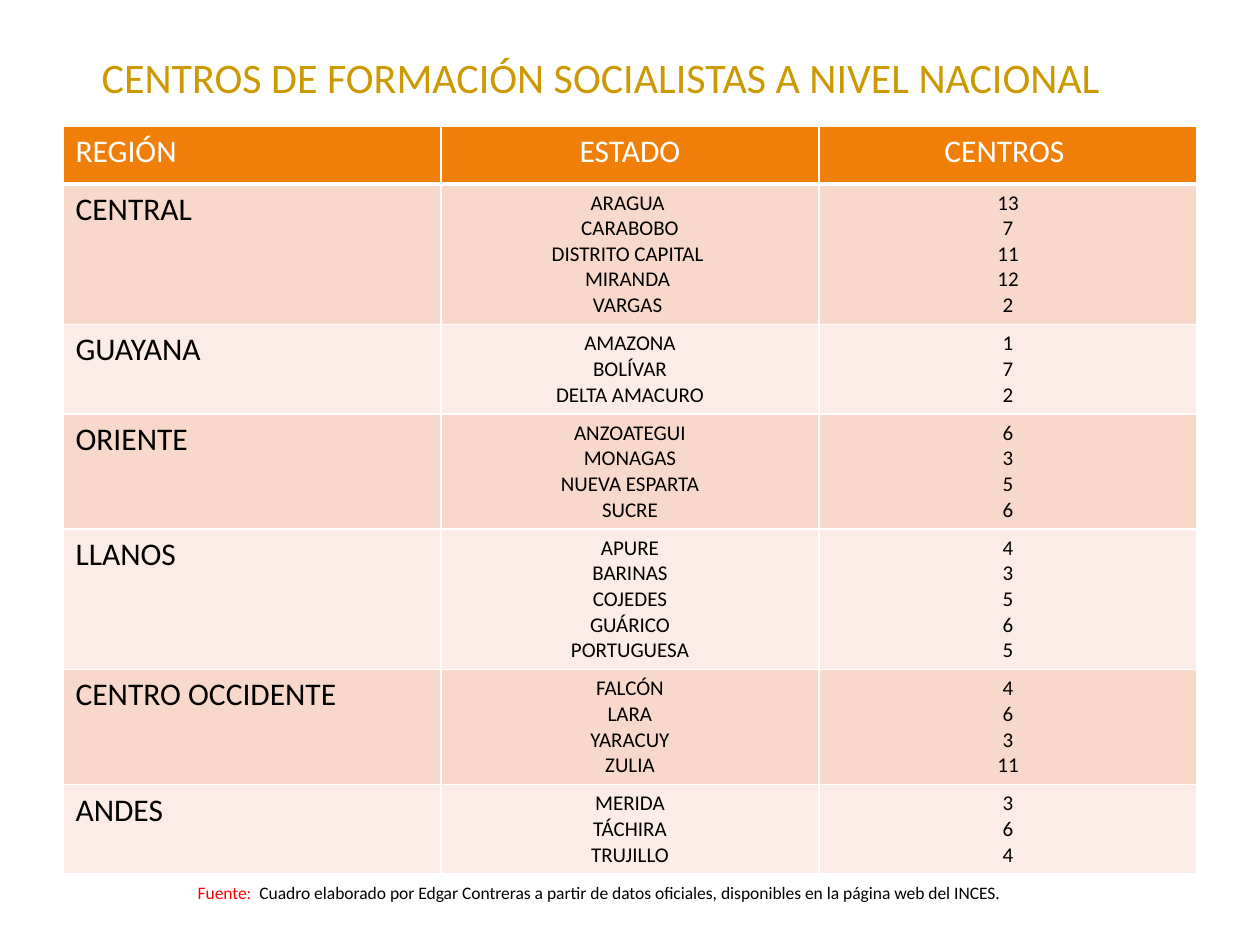
import pptx
import pptx.dml.color
import pptx.enum.text
import pptx.oxml
import pptx.oxml.ns
import pptx.util

Inches = pptx.util.Inches
Pt = pptx.util.Pt
CENTER = pptx.enum.text.PP_ALIGN.CENTER
LEFT = pptx.enum.text.PP_ALIGN.LEFT
FONT = "Calibri"
COLORS = {
    "title": "CC9900",
    "header": "F07F09",
    "band_dark": "F9D8CC",
    "band_light": "FCECE7",
    "white": "FFFFFF",
    "black": "000000",
    "source": "FF0000",
}
HEADINGS = ["REGIÓN", "ESTADO", "CENTROS "]
REGIONS = [
    ("CENTRAL", [("ARAGUA ", 13), ("CARABOBO", 7), ("DISTRITO CAPITAL ", 11),
                 ("MIRANDA ", 12), ("VARGAS ", 2)]),
    ("GUAYANA", [("AMAZONA", 1), ("BOLÍVAR", 7), ("DELTA AMACURO", 2)]),
    ("ORIENTE", [("ANZOATEGUI", 6), ("MONAGAS", 3), ("NUEVA ESPARTA", 5),
                 ("SUCRE", 6)]),
    ("LLANOS", [("APURE", 4), ("BARINAS", 3), ("COJEDES", 5), ("GUÁRICO", 6),
                ("PORTUGUESA", 5)]),
    ("CENTRO OCCIDENTE", [("FALCÓN", 4), ("LARA", 6), ("YARACUY", 3),
                          ("ZULIA", 11)]),
    ("ANDES", [("MERIDA", 3), ("TÁCHIRA", 6), ("TRUJILLO", 4)]),
]


def rgb(name):
    return pptx.dml.color.RGBColor.from_string(COLORS[name])


def add_run(paragraph, text, size, color):
    run = paragraph.add_run()
    run.text = text
    run.font.name = FONT
    run.font.size = Pt(size)
    run.font.bold = False
    run.font.color.rgb = rgb(color)


def add_borders(cell, bottom_width):
    properties = cell._tc.get_or_add_tcPr()
    for side, width in (("L", 1), ("R", 1), ("T", 1), ("B", bottom_width)):
        properties.append(pptx.oxml.parse_xml(
            f'<a:ln{side} {pptx.oxml.ns.nsdecls("a")} w="{Pt(width)}">'
            f'<a:solidFill><a:srgbClr val="{COLORS["white"]}"/></a:solidFill>'
            f'</a:ln{side}>'))


def fill_cell(cell, lines, size, color, fill, align, bottom_width=1):
    add_borders(cell, bottom_width)
    cell.fill.solid()
    cell.fill.fore_color.rgb = rgb(fill)
    frame = cell.text_frame
    for index, line in enumerate(lines):
        paragraph = frame.add_paragraph() if index else frame.paragraphs[0]
        paragraph.alignment = align
        add_run(paragraph, line, size, color)


def place_title(slide, left, top, width, height):
    title = slide.shapes.title
    title.left, title.top, title.width, title.height = left, top, width, height
    frame = title.text_frame
    frame.word_wrap = True
    frame.auto_size = pptx.enum.text.MSO_AUTO_SIZE.NONE
    frame.vertical_anchor = pptx.enum.text.MSO_ANCHOR.TOP
    heading = frame.paragraphs[0]
    heading.alignment = CENTER
    add_run(heading, "CENTROS DE FORMACIÓN SOCIALISTAS A NIVEL NACIONAL ", 24, "title")


def place_centers_table(slide, left, top, width):
    heights = [Inches(0.46)] + [
        Inches(0.1 + 0.2 * len(states)) for _, states in REGIONS]
    centers = slide.shapes.add_table(
        len(heights), len(HEADINGS), left, top, width, sum(heights)).table
    for row, height in zip(centers.rows, heights):
        row.height = height
    for column, heading in enumerate(HEADINGS):
        fill_cell(centers.cell(0, column), [heading], 18, "white", "header",
                  CENTER if column else LEFT, 3)
    for row, (region, states) in enumerate(REGIONS, 1):
        band = "band_dark" if row % 2 else "band_light"
        names = [name for name, _ in states]
        counts = [str(count) for _, count in states]
        fill_cell(centers.cell(row, 0), [region], 18, "black", band, LEFT)
        fill_cell(centers.cell(row, 1), names, 12, "black", band, CENTER)
        fill_cell(centers.cell(row, 2), counts, 12, "black", band, CENTER)


def place_source(slide, left, top, width, height):
    frame = slide.shapes.add_textbox(left, top, width, height).text_frame
    frame.word_wrap = False
    frame.auto_size = pptx.enum.text.MSO_AUTO_SIZE.SHAPE_TO_FIT_TEXT
    credit = frame.paragraphs[0]
    add_run(credit, "Fuente:  ", 10, "source")
    add_run(credit, "Cuadro elaborado por Edgar Contreras a partir de datos oficiales, "
            "disponibles en la página web del INCES.", 10, "black")


def main():
    deck = pptx.Presentation()
    deck.slide_width, deck.slide_height = Inches(10), Inches(7.5)
    slide = deck.slides.add_slide(deck.slide_layouts.get_by_name("Title Only"))
    place_centers_table(slide, Inches(0.5), Inches(1), Inches(9))
    place_source(slide, Inches(1.47), Inches(6.95), Inches(6.68), Inches(0.27))
    place_title(slide, Inches(0.59), Inches(0.36), Inches(8.43), Inches(0.5))
    deck.save("out.pptx")


if __name__ == "__main__":
    main()
